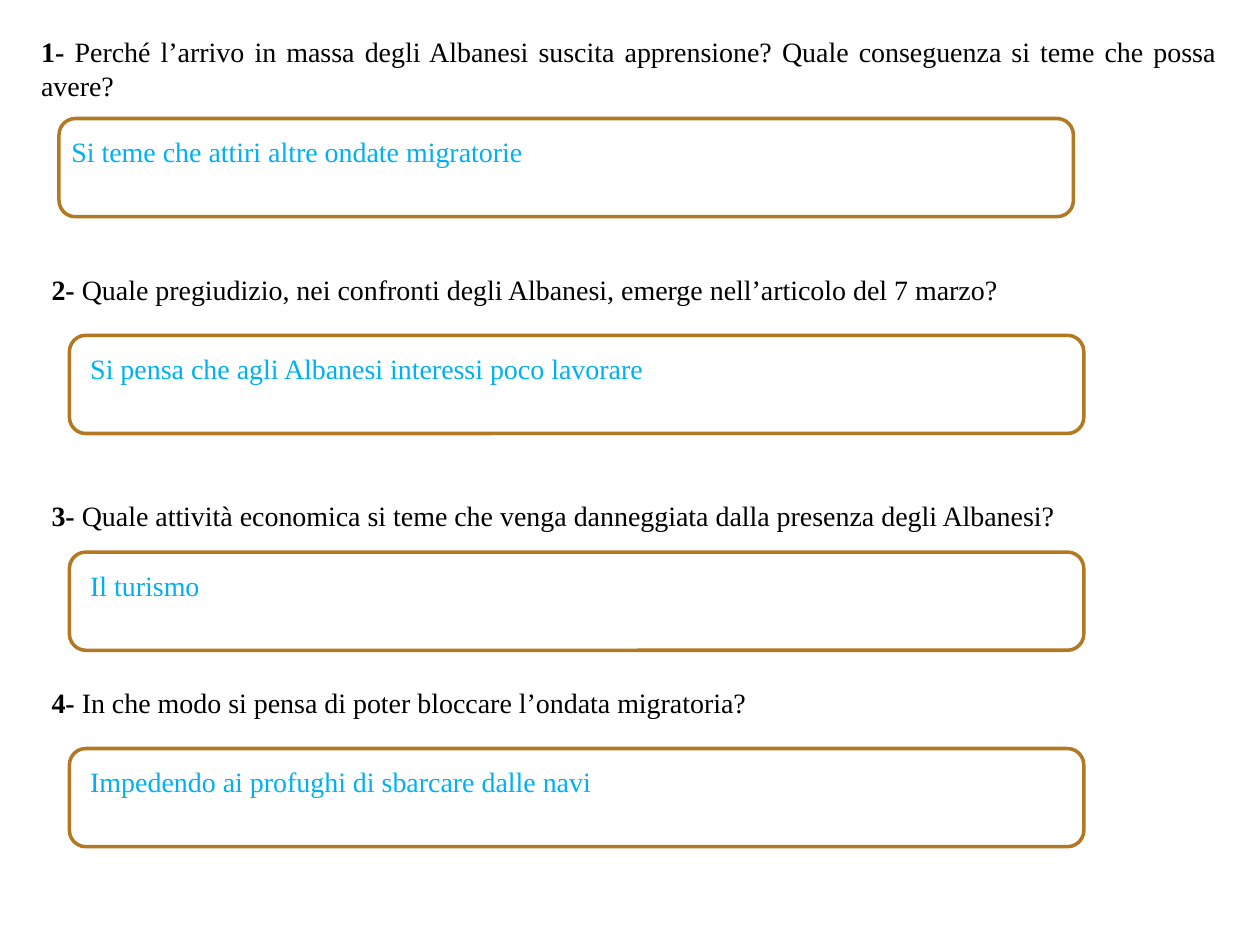
import dataclasses

import pptx
import pptx.dml.color
import pptx.enum.shapes
import pptx.enum.text
import pptx.util

Cm = pptx.util.Cm
RGB = pptx.dml.color.RGBColor


@dataclasses.dataclass(frozen=True)
class Theme:
    question: RGB = RGB(0x00, 0x00, 0x00)
    answer: RGB = RGB(0x00, 0xB0, 0xF0)
    frame: RGB = RGB(0xB2, 0x78, 0x22)
    paper: RGB = RGB(0xFF, 0xFF, 0xFF)
    font: str = "Times New Roman"
    text_size: float = 16
    frame_width: float = 2


@dataclasses.dataclass(frozen=True)
class Exercise:
    question: str
    answer: str
    question_top: float
    frame_top: float
    question_left: float = 0.79
    question_height: float = 0.94
    frame_left: float = 1.4
    answer_left: float = 1.57
    answer_width: float = 19.84
    answer_wraps: bool = True


THEME = Theme()
EXERCISES = [
    Exercise(
        "Perché l’arrivo in massa degli Albanesi suscita apprensione? "
        "Quale conseguenza si teme che possa avere?",
        "Si teme che attiri altre ondate migratorie",
        0.58, 2.39, question_left=0.58, question_height=1.63,
        frame_left=1.19, answer_left=1.19, answer_width=9.75, answer_wraps=False,
    ),
    Exercise(
        "Quale pregiudizio, nei confronti degli Albanesi, emerge nell’articolo del 7 marzo?",
        "Si pensa che agli Albanesi interessi poco lavorare",
        5.36, 6.76,
    ),
    Exercise(
        "Quale attività economica si teme che venga danneggiata dalla presenza degli Albanesi?",
        "Il turismo",
        9.93, 11.13,
    ),
    Exercise(
        "In che modo si pensa di poter bloccare l’ondata migratoria?",
        "Impedendo ai profughi di sbarcare dalle navi",
        13.69, 15.09,
    ),
]


def add_text(slide, text: str, *, left: float, top: float, width: float,
             height: float, color: RGB, label: str = "", wrap: bool = True,
             anchor=pptx.enum.text.MSO_ANCHOR.TOP) -> None:
    frame = slide.shapes.add_textbox(Cm(left), Cm(top), Cm(width), Cm(height)).text_frame
    frame.word_wrap = wrap
    frame.auto_size = pptx.enum.text.MSO_AUTO_SIZE.SHAPE_TO_FIT_TEXT
    frame.vertical_anchor = anchor
    paragraph = frame.paragraphs[0]
    paragraph.alignment = pptx.enum.text.PP_ALIGN.JUSTIFY
    for words, bold in ((label, True), (text, False)):
        if words:
            run = paragraph.add_run()
            run.text = words
            run.font.name = THEME.font
            run.font.size = pptx.util.Pt(THEME.text_size)
            run.font.bold = bold
            run.font.color.rgb = color


def add_answer_frame(slide, left: float, top: float) -> None:
    frame = slide.shapes.add_shape(
        pptx.enum.shapes.MSO_SHAPE.ROUNDED_RECTANGLE,
        Cm(left), Cm(top), Cm(20.45), Cm(1.98),
    )
    frame.shadow.inherit = False
    frame.fill.solid()
    frame.fill.fore_color.rgb = THEME.paper
    frame.line.color.rgb = THEME.frame
    frame.line.width = pptx.util.Pt(THEME.frame_width)


def add_exercise(slide, number: int, exercise: Exercise) -> None:
    add_text(slide, exercise.question, label=f"{number}- ",
             left=exercise.question_left, top=exercise.question_top,
             width=24.2, height=exercise.question_height, color=THEME.question)
    add_answer_frame(slide, exercise.frame_left, exercise.frame_top)
    add_text(slide, exercise.answer,
             left=exercise.answer_left, top=exercise.frame_top + 0.19,
             width=exercise.answer_width, height=0.94, color=THEME.answer,
             wrap=exercise.answer_wraps, anchor=pptx.enum.text.MSO_ANCHOR.MIDDLE)


def main() -> None:
    presentation = pptx.Presentation()
    presentation.slide_width = Cm(25.4)
    presentation.slide_height = Cm(19.05)
    slide = presentation.slides.add_slide(presentation.slide_layouts[6])
    for number, exercise in enumerate(EXERCISES, start=1):
        add_exercise(slide, number, exercise)
    presentation.save("out.pptx")


if __name__ == "__main__":
    main()
